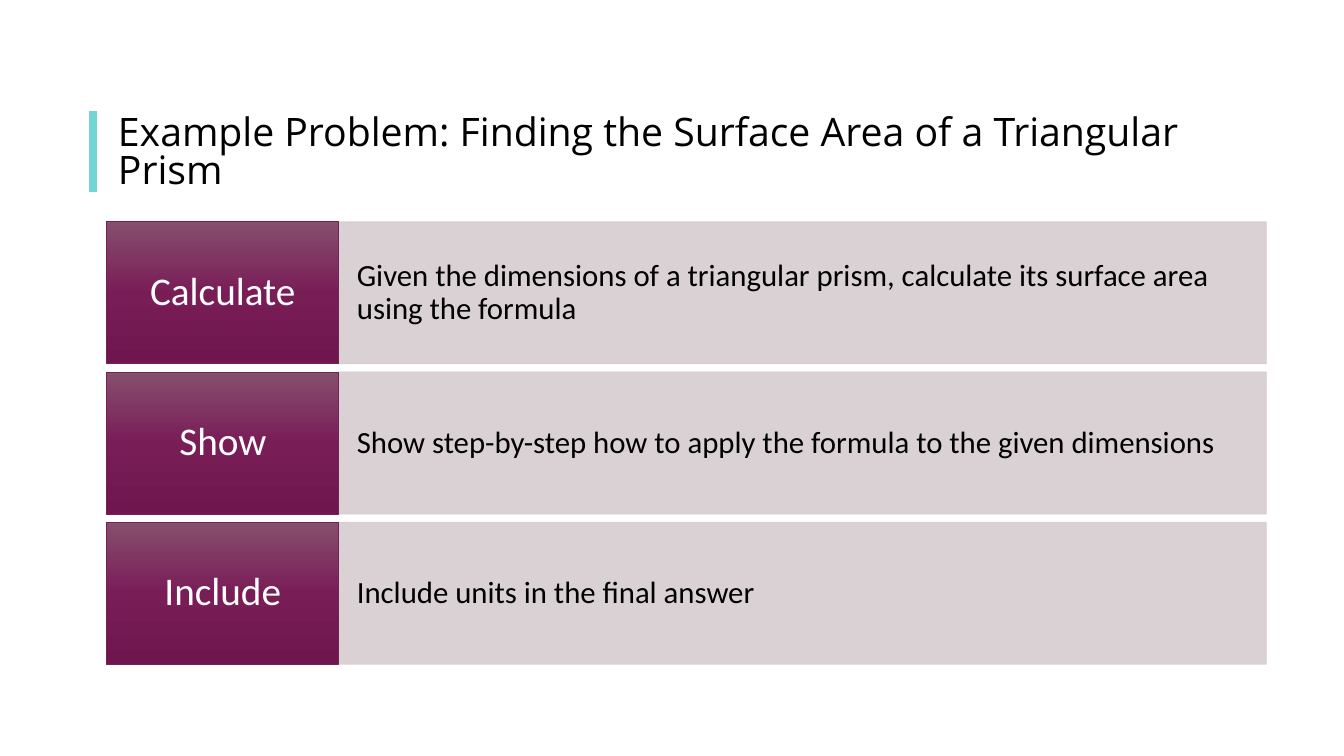
from lxml import etree
from pptx import Presentation
from pptx.dml.color import RGBColor
from pptx.enum.shapes import MSO_CONNECTOR, MSO_SHAPE
from pptx.enum.text import MSO_ANCHOR, PP_ALIGN
from pptx.oxml.ns import qn
from pptx.util import Inches, Pt

RECTANGLE = MSO_SHAPE.RECTANGLE
STRAIGHT = MSO_CONNECTOR.STRAIGHT
TOP, MIDDLE = MSO_ANCHOR.TOP, MSO_ANCHOR.MIDDLE
LEFT, CENTER = PP_ALIGN.LEFT, PP_ALIGN.CENTER

BLACK = RGBColor(0x00, 0x00, 0x00)
WHITE = RGBColor(0xFF, 0xFF, 0xFF)
TEAL = RGBColor(0x76, 0xD5, 0xD4)
PALE_MAUVE = RGBColor(0xD6, 0xCD, 0xD1)
PLUM_EDGE = RGBColor(0x75, 0x21, 0x56)
PLUM_STOPS = [(0, "864F6D"), (50, "791D57"), (100, "6F164E")]

# Grid: a label column, a description column and equally pitched rows
GRID_LEFT, GRID_TOP = Inches(1.06), Inches(2.2)
LABEL_WIDTH, DESCRIPTION_WIDTH = Inches(2.3), Inches(9.2)
ROW_HEIGHT, ROW_PITCH = Inches(1.41), Inches(1.49)
TITLE_TOP, TITLE_HEIGHT = Inches(1.1), Inches(0.8)

TITLE = "Example Problem: Finding the Surface Area of a Triangular Prism"
STEPS = [
    ("Calculate", "Given the dimensions of a triangular prism, calculate its "
                  "surface area using the formula"),
    ("Show", "Show step-by-step how to apply the formula to the given dimensions"),
    ("Include", "Include units in the final answer"),
]


def write_text(shape, text, font_name, size, color, alignment, anchor, spacing):
    frame = shape.text_frame
    frame.text = text
    frame.word_wrap = True
    frame.vertical_anchor = anchor
    paragraph = frame.paragraphs[0]
    paragraph.alignment = alignment
    paragraph.line_spacing = spacing
    font = paragraph.runs[0].font
    font.name, font.size, font.color.rgb = font_name, Pt(size), color


def set_margins(shape, horizontal, vertical):
    frame = shape.text_frame
    frame.margin_left = frame.margin_right = Inches(horizontal)
    frame.margin_top = frame.margin_bottom = Inches(vertical)


def set_opacity(fill_format, percent):
    """Make a solid fill's colour partly transparent."""
    color = fill_format._xPr.find(qn("a:solidFill"))[0]
    etree.SubElement(color, qn("a:alpha")).set("val", str(percent * 1000))


def set_vertical_gradient(shape, stops):
    """Fill the shape from top to bottom with (percent, colour) stops."""
    shape.fill.gradient()
    gradient = shape._element.spPr.find(qn("a:gradFill"))
    stop_list = gradient.find(qn("a:gsLst"))
    for stop in list(stop_list):
        stop_list.remove(stop)
    for percent, color in stops:
        stop = etree.SubElement(stop_list, qn("a:gs"), pos=str(percent * 1000))
        etree.SubElement(stop, qn("a:srgbClr"), val=color)
    gradient.find(qn("a:lin")).set("ang", str(90 * 60000))


def add_cell(slide, left, top, width, line_color):
    cell = slide.shapes.add_shape(RECTANGLE, left, top, width, ROW_HEIGHT)
    cell.shadow.inherit = False
    cell.line.color.rgb = line_color
    cell.line.width = Pt(0.5)
    return cell


def add_step(slide, row, label, description):
    top = GRID_TOP + row * ROW_PITCH

    panel = add_cell(slide, GRID_LEFT + LABEL_WIDTH, top, DESCRIPTION_WIDTH, PALE_MAUVE)
    panel.fill.solid()
    panel.fill.fore_color.rgb = PALE_MAUVE
    for fill_format in (panel.fill, panel.line.fill):
        set_opacity(fill_format, 90)
    set_margins(panel, 0.18, 0.36)
    write_text(panel, description, "Calibri", 22, BLACK, LEFT, MIDDLE, 0.9)

    tile = add_cell(slide, GRID_LEFT, top, LABEL_WIDTH, PLUM_EDGE)
    set_vertical_gradient(tile, PLUM_STOPS)
    set_margins(tile, 0.12, 0.14)
    write_text(tile, label, "Calibri", 28, WHITE, CENTER, MIDDLE, 0.9)


def add_title(slide):
    title = slide.shapes.title
    title.left, title.top = Inches(1.07), TITLE_TOP
    title.width, title.height = Inches(11.5), TITLE_HEIGHT
    set_margins(title, 0.1, 0.05)
    write_text(title, TITLE, "Open Sans", 28, BLACK, LEFT, TOP, 0.81)


def add_accent_bar(slide):
    left = Inches(0.92)
    bar = slide.shapes.add_connector(
        STRAIGHT, left, TITLE_TOP, left, TITLE_TOP + TITLE_HEIGHT)
    bar.line.color.rgb = TEAL
    bar.line.width = Pt(6)
    etree.SubElement(bar._element.spPr, qn("a:effectLst"))


def main():
    presentation = Presentation()
    presentation.slide_width, presentation.slide_height = Inches(13.33), Inches(7.5)
    title_only = presentation.slide_layouts[5]
    slide = presentation.slides.add_slide(title_only)
    add_accent_bar(slide)
    add_title(slide)
    for row, (label, description) in enumerate(STEPS):
        add_step(slide, row, label, description)
    presentation.save("out.pptx")


if __name__ == "__main__":
    main()
